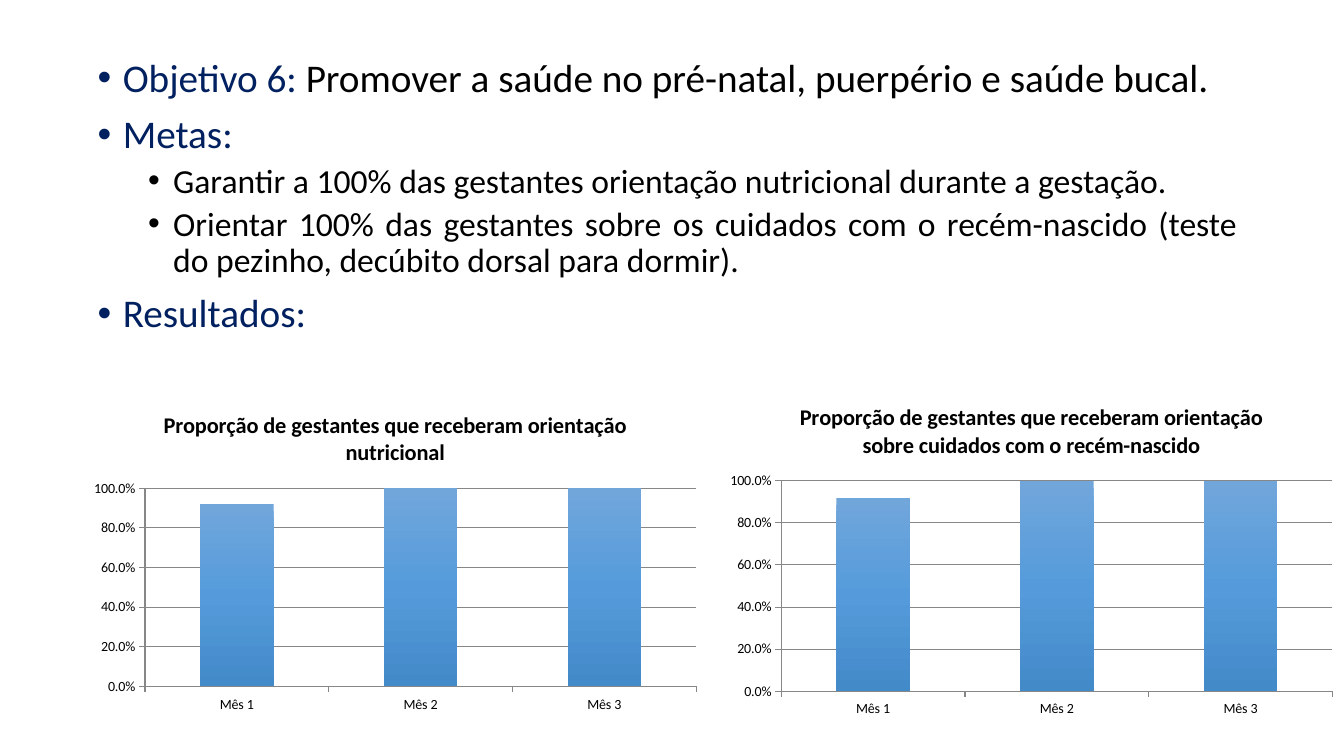
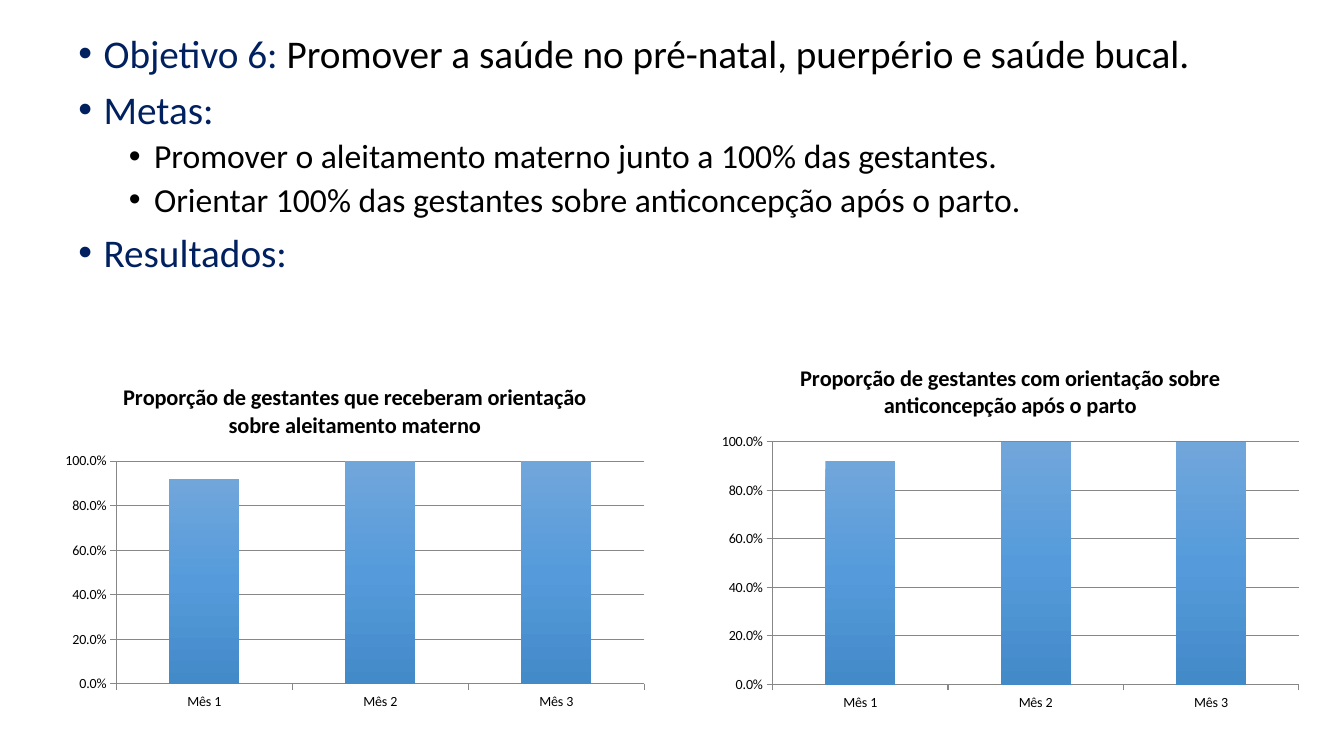
from copy import deepcopy
from dataclasses import dataclass

from lxml import etree
from pptx import Presentation
from pptx import util as u
from pptx.chart import data as chart_data
from pptx.dml import color
from pptx.enum import chart as chart_enum, text
from pptx.oxml import ns

PX = 9144


@dataclass(frozen=True)
class Theme:
    """Hold the colours and type sizes that the slides share."""
    font: str = "Calibri"
    heading: str = "002060"
    body: str = "000000"
    grid: str = "878787"
    bar: tuple = ("71A6DB", "559BDB", "438AC9")
    heading_size: int = 28
    goal_size: int = 24
    chart_title_size: int = 16
    axis_size: int = 10


THEME = Theme()
OBJECTIVE = "Promover a saúde no pré-natal, puerpério e saúde bucal."
MONTHS = ("Mês 1", "Mês 2", "Mês 3")
RATES = (0.92, 1, 1)

SLIDES = (
    {
        "text_box": (87, 53, 1150, 476),
        "goals": (
            "Garantir a 100% das gestantes orientação nutricional durante a gestação.",
            "Orientar 100% das gestantes sobre os cuidados com o recém-nascido "
            "(teste do pezinho, decúbito dorsal para dormir).",
        ),
        "charts": (
            ("Proporção de gestantes que receberam orientação nutricional",
             (81, 391, 622, 322)),
            ("Proporção de gestantes que receberam orientação sobre cuidados "
             "com o recém-nascido", (712, 383, 622, 335)),
        ),
    },
    {
        "text_box": (68, 29, 1150, 289),
        "goals": (
            "Promover o aleitamento materno junto a 100% das gestantes.",
            "Orientar 100% das gestantes sobre anticoncepção após o parto.",
        ),
        "charts": (
            ("Proporção de gestantes que receberam orientação sobre "
             "aleitamento materno", (53, 363, 598, 348)),
            ("Proporção de gestantes com orientação sobre anticoncepção "
             "após o parto", (704, 343, 596, 369)),
        ),
    },
)


def scale(box):
    """Turn a box in px into EMU."""
    return [u.Emu(length * PX) for length in box]


def apply_format(target, values):
    """Set each attribute of the target from a dict."""
    for name, value in values.items():
        setattr(target, name, value)


def style_font(font, size, rgb, bold=False):
    """Give a font the theme typeface with a size, colour and weight."""
    apply_format(font, {"name": THEME.font, "size": u.Pt(size), "bold": bold})
    font.color.rgb = color.RGBColor.from_string(rgb)


def style_line(line):
    """Draw an axis or grid line in the shared grey."""
    line.width = u.Pt(0.75)
    line.color.rgb = color.RGBColor.from_string(THEME.grid)


def add_bullet(paragraph, runs, level=0):
    """Fill a justified bullet paragraph with coloured runs."""
    size = THEME.goal_size if level else THEME.heading_size
    apply_format(paragraph, {
        "level": level,
        "alignment": text.PP_ALIGN.JUSTIFY,
        "line_spacing": 0.9,
        "space_before": u.Pt(5 if level else 10),
    })
    properties = paragraph._p.get_or_add_pPr()
    properties.set("marL", str((25 + 50 * level) * PX))
    properties.set("indent", str(-25 * PX))
    etree.SubElement(properties, ns.qn("a:buFont")).set("typeface", "Arial")
    etree.SubElement(properties, ns.qn("a:buChar")).set("char", "•")
    for words, rgb in runs:
        run = paragraph.add_run()
        run.text = words
        style_font(run.font, size, rgb)


def add_outline(slide, box, goals):
    """Place the objective, goals and results heading in a box."""
    frame = slide.shapes.add_textbox(*scale(box)).text_frame
    frame.word_wrap = True
    bullets = [
        ([("Objetivo 6: ", THEME.heading), (OBJECTIVE, THEME.body)], 0),
        ([("Metas:", THEME.heading)], 0),
        *(([(goal, THEME.body)], 1) for goal in goals),
        ([("Resultados:", THEME.heading)], 0),
    ]
    for index, (runs, level) in enumerate(bullets):
        paragraph = frame.add_paragraph() if index else frame.paragraphs[0]
        add_bullet(paragraph, runs, level)


def fill_bars(series):
    """Shade the bars from top to bottom with the theme gradient."""
    fill = series.format.fill
    fill.gradient()
    fill.gradient_angle = 270
    stops = next(series._element.iter(ns.qn("a:gsLst")))
    stops.append(deepcopy(stops[0]))
    for stop, rgb, position in zip(fill.gradient_stops, THEME.bar, (0, 0.5, 1)):
        stop.color.rgb = color.RGBColor.from_string(rgb)
        stop.position = position


def add_rate_chart(slide, title, box):
    """Place a titled column chart of monthly rates in a box."""
    data = chart_data.CategoryChartData(number_format="0.0%")
    data.categories = MONTHS
    data.add_series(title, RATES)
    chart = slide.shapes.add_chart(
        chart_enum.XL_CHART_TYPE.COLUMN_CLUSTERED, *scale(box), data).chart
    chart.has_legend = False
    style_font(chart.font, THEME.axis_size, THEME.body)

    chart.chart_title.include_in_layout = False
    paragraph = chart.chart_title.text_frame.paragraphs[0]
    run = paragraph.add_run()
    run.text = title
    style_font(run.font, THEME.chart_title_size, THEME.body, bold=True)

    value_axis = chart.value_axis
    apply_format(value_axis, {
        "minimum_scale": 0, "maximum_scale": 1, "major_unit": 0.2,
        "has_major_gridlines": True,
    })
    apply_format(value_axis.tick_labels, {
        "number_format": "0.0%", "number_format_is_linked": False,
    })
    style_line(value_axis.major_gridlines.format.line)
    for axis in (chart.category_axis, value_axis):
        axis.major_tick_mark = chart_enum.XL_TICK_MARK.OUTSIDE
        style_line(axis.format.line)

    plot = chart.plots[0]
    apply_format(plot, {"gap_width": 150, "vary_by_categories": False})
    fill_bars(plot.series[0])


def add_results_slide(presentation, content):
    """Add a slide with an outline above two charts."""
    slide = presentation.slides.add_slide(presentation.slide_layouts[6])
    add_outline(slide, content["text_box"], content["goals"])
    for title, box in content["charts"]:
        add_rate_chart(slide, title, box)


def main():
    """Build and save the presentation."""
    presentation = Presentation()
    width, height = scale((1333, 750))
    apply_format(presentation, {"slide_width": width, "slide_height": height})
    for content in SLIDES:
        add_results_slide(presentation, content)
    presentation.save("out.pptx")


if __name__ == "__main__":
    main()
